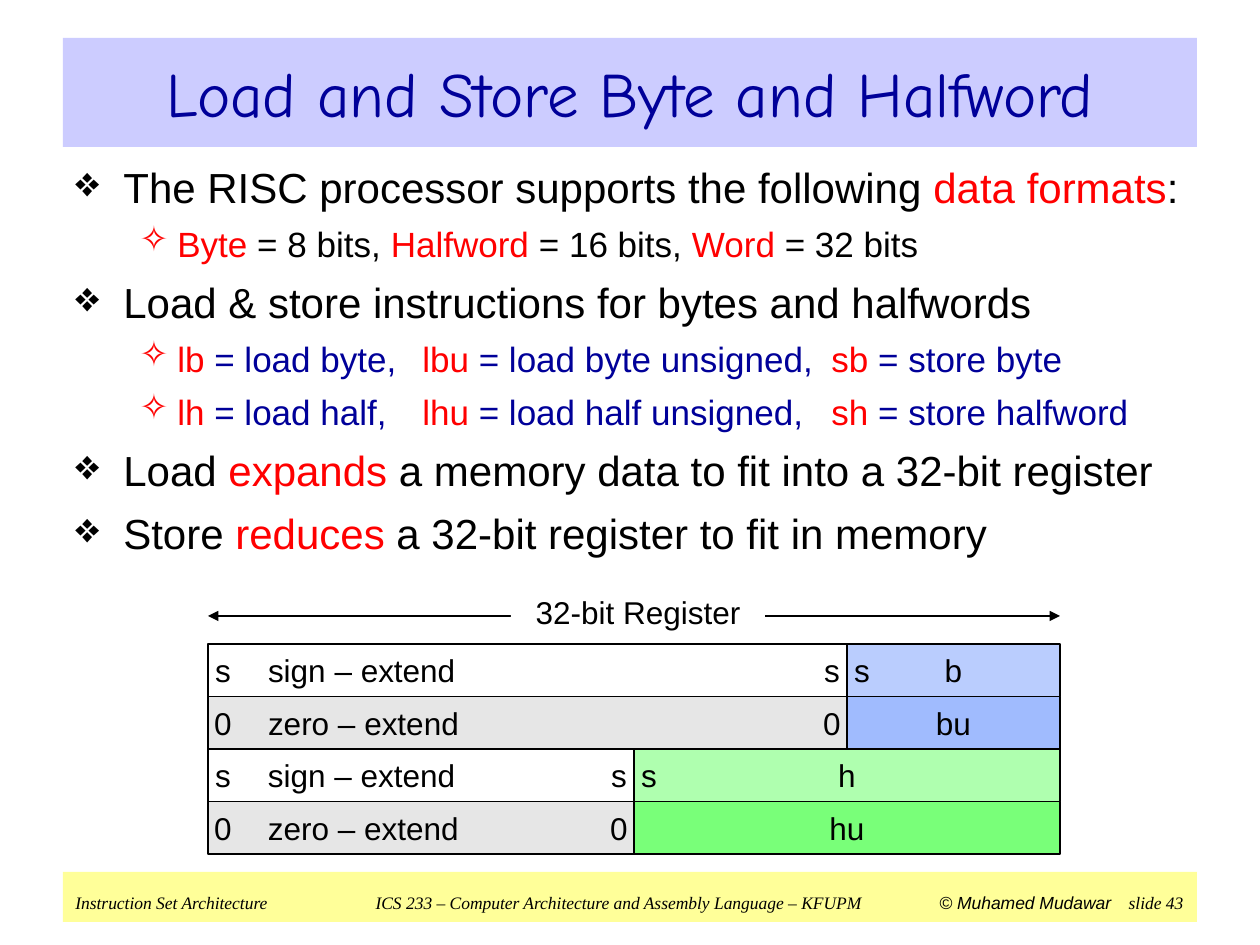
from lxml import etree
from pptx import Presentation
from pptx.dml.color import RGBColor
from pptx.enum.shapes import MSO_CONNECTOR, MSO_SHAPE
from pptx.enum.text import MSO_ANCHOR, PP_ALIGN
from pptx.oxml.ns import qn
from pptx.util import Emu, Pt

PX_PER_INCH = 126
SCALE = 914400 / PX_PER_INCH

BLACK = RGBColor(0x00, 0x00, 0x00)
WHITE = RGBColor(0xFF, 0xFF, 0xFF)
RED = RGBColor(0xFF, 0x00, 0x00)
NAVY = RGBColor(0x00, 0x00, 0x99)
LAVENDER = RGBColor(0xCC, 0xCC, 0xFF)
YELLOW = RGBColor(0xFF, 0xFF, 0x99)
GRAY = RGBColor(0xE6, 0xE6, 0xE6)
LIGHT_BLUE = RGBColor(0xBA, 0xCD, 0xFE)
BLUE = RGBColor(0xA0, 0xBB, 0xFE)
LIGHT_GREEN = RGBColor(0xAF, 0xFF, 0xAF)
GREEN = RGBColor(0x79, 0xFF, 0x79)

# Content
TITLE = "Load and Store Byte and Halfword"
BODY = [  # level, runs of (text, colour)
    (0, [("The RISC processor supports the following ", BLACK),
         ("data formats", RED), (":", BLACK)]),
    (1, [("Byte", RED), (" = 8 bits, ", BLACK), ("Halfword", RED),
         (" = 16 bits, ", BLACK), ("Word", RED), (" = 32 bits", BLACK)]),
    (0, [("Load & store instructions for bytes and halfwords", BLACK)]),
    (1, [("lb", RED), (" = load byte,\t", NAVY), ("lbu", RED),
         (" = load byte unsigned,\t", NAVY), ("sb", RED), (" = store byte", NAVY)]),
    (1, [("lh", RED), (" = load half,\t", NAVY), ("lhu", RED),
         (" = load half unsigned,\t", NAVY), ("sh", RED), (" = store halfword", NAVY)]),
    (0, [("Load ", BLACK), ("expands", RED),
         (" a memory data to fit into a 32-bit register", BLACK)]),
    (0, [("Store ", BLACK), ("reduces", RED),
         (" a 32-bit register to fit in memory", BLACK)]),
]
LEVELS = [  # bullet, size, left margin px, hanging px
    ("❖", 24, 48, 48),
    ("✧", 20, 102, 38),
]
REGISTER_LABEL = "32-bit Register"
REGISTER_ROWS = [  # extension, its fill, extension bit, value bit, value, its fill, value bits
    ("sign – extend", WHITE, "s", "s", "b", LIGHT_BLUE, 8),
    ("zero – extend", GRAY, "0", "", "bu", BLUE, 8),
    ("sign – extend", WHITE, "s", "s", "h", LIGHT_GREEN, 16),
    ("zero – extend", GRAY, "0", "", "hu", GREEN, 16),
]
FOOTER = [  # text, size, font, italic
    ("Instruction Set Architecture\tICS 233 – Computer Architecture and "
     "Assembly Language – KFUPM\t", 10, "Times New Roman", True),
    ("© Muhamed Mudawar", 10, "Arial", True),
    ("  ", 18, "Arial", False),
    ("slide 43", 10, "Times New Roman", True),
]

# Layout in px
BAND_LEFT, BAND_WIDTH = 63, 1134
REGISTER_LEFT, REGISTER_TOP, REGISTER_WIDTH = 208, 644, 852
ROW_PITCH, BITS = 52.5, 32
BIT_BOX, BIT_OFFSET = 48, 15
EXTENSION_INDENT = 60
ARROW_Y = 616


def px(value):
    return Emu(round(value * SCALE))


def add_run(paragraph, text, size, color, font="Arial", italic=False):
    run = paragraph.add_run()
    run.text = text
    run.font.size = Pt(size)
    run.font.name = font
    run.font.italic = italic
    run.font.color.rgb = color


def add_box(slide, left, top, width, height, fill=None, outlined=False):
    area = px(left), px(top), px(width), px(height)
    if fill is None:
        shape = slide.shapes.add_textbox(*area)
    else:
        shape = slide.shapes.add_shape(MSO_SHAPE.RECTANGLE, *area)
        shape.shadow.inherit = False
        shape.fill.solid()
        shape.fill.fore_color.rgb = fill
        if outlined:
            shape.line.color.rgb = BLACK
            shape.line.width = Pt(1)
        else:
            shape.line.fill.background()
    shape.text_frame.word_wrap = True
    shape.text_frame.vertical_anchor = MSO_ANCHOR.MIDDLE
    return shape


def write(shape, text, size=18, color=BLACK, font="Arial", align=PP_ALIGN.CENTER):
    paragraph = shape.text_frame.paragraphs[0]
    paragraph.alignment = align
    add_run(paragraph, text, size, color, font)


def add_tabs(paragraph, stops):
    tab_list = etree.SubElement(paragraph._p.get_or_add_pPr(), qn("a:tabLst"))
    for position, align in stops:
        etree.SubElement(tab_list, qn("a:tab"), pos=str(px(position)), algn=align)


def format_bullet(paragraph, bullet, margin, hanging):
    properties = paragraph._p.get_or_add_pPr()
    properties.set("marL", str(px(margin)))
    properties.set("indent", str(px(-hanging)))
    spacing = etree.SubElement(properties, qn("a:spcBef"))
    etree.SubElement(spacing, qn("a:spcPct"), val="30000")
    etree.SubElement(properties, qn("a:buChar"), char=bullet)
    add_tabs(paragraph, [(347, "l"), (756, "l")])


def add_body(slide):
    frame = add_box(slide, BAND_LEFT, 155, BAND_WIDTH, 454).text_frame
    frame.vertical_anchor = MSO_ANCHOR.TOP
    for index, (level, runs) in enumerate(BODY):
        paragraph = frame.add_paragraph() if index else frame.paragraphs[0]
        paragraph.level = level
        bullet, size, margin, hanging = LEVELS[level]
        format_bullet(paragraph, bullet, margin, hanging)
        for text, color in runs:
            add_run(paragraph, text, size, color)


def add_register_row(slide, row, content):
    extension, extension_fill, bit, value_bit, value, value_fill, bits = content
    top = REGISTER_TOP + ROW_PITCH * row
    value_width = REGISTER_WIDTH * bits / BITS
    extension_width = REGISTER_WIDTH - value_width
    split = REGISTER_LEFT + extension_width

    cell = add_box(slide, REGISTER_LEFT, top, extension_width, ROW_PITCH, extension_fill, True)
    cell.text_frame.margin_left = px(EXTENSION_INDENT)
    write(cell, extension, align=PP_ALIGN.LEFT)
    write(add_box(slide, split, top, value_width, ROW_PITCH, value_fill, True), value)

    # Sign or zero bits beside the cell edges
    centers = [(REGISTER_LEFT + BIT_OFFSET, bit), (split - BIT_OFFSET, bit),
               (split + BIT_OFFSET, value_bit)]
    for center, text in centers:
        if text:
            write(add_box(slide, center - BIT_BOX / 2, top, BIT_BOX, ROW_PITCH), text)


def add_width_arrow(slide):
    arrow = slide.shapes.add_connector(
        MSO_CONNECTOR.STRAIGHT, px(REGISTER_LEFT), px(ARROW_Y),
        px(REGISTER_LEFT + REGISTER_WIDTH), px(ARROW_Y))
    arrow.line.color.rgb = BLACK
    arrow.line.width = Pt(1)
    line = arrow.line._get_or_add_ln()
    for end in ("a:headEnd", "a:tailEnd"):
        etree.SubElement(line, qn(end), type="triangle")
    etree.SubElement(arrow._element.spPr, qn("a:effectLst"))
    write(add_box(slide, 511, 587, 254, 50, WHITE), REGISTER_LABEL)


def add_footer(slide):
    paragraph = add_box(slide, BAND_LEFT, 872, BAND_WIDTH, 50, YELLOW).text_frame.paragraphs[0]
    paragraph.alignment = PP_ALIGN.LEFT
    add_tabs(paragraph, [(543, "ctr"), (1108, "r")])
    for text, size, font, italic in FOOTER:
        add_run(paragraph, text, size, BLACK, font, italic)


def main():
    presentation = Presentation()
    presentation.slide_width = px(1260)
    presentation.slide_height = px(945)
    slide = presentation.slides.add_slide(presentation.slide_layouts[6])

    add_footer(slide)
    for row, content in enumerate(REGISTER_ROWS):
        add_register_row(slide, row, content)
    add_width_arrow(slide)
    add_body(slide)
    title = add_box(slide, BAND_LEFT, 38, BAND_WIDTH, 109, LAVENDER)
    write(title, TITLE, 36, NAVY, "Comic Neue")

    presentation.save("out.pptx")


if __name__ == "__main__":
    main()
